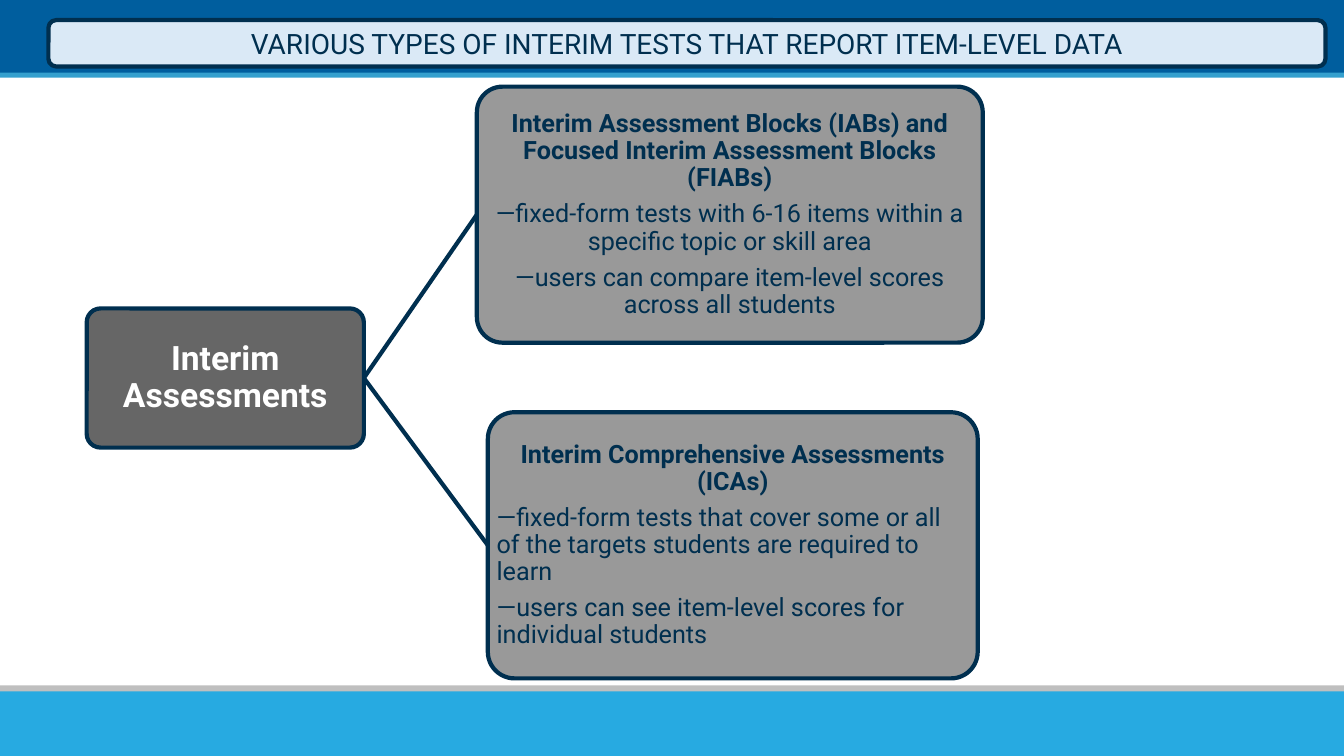
"""Build the slide on interim tests that report item-level data."""
from lxml import etree
from pptx import Presentation
from pptx.dml.color import RGBColor
from pptx.enum.shapes import MSO_CONNECTOR, MSO_SHAPE
from pptx.enum.text import MSO_ANCHOR, PP_ALIGN
from pptx.oxml.ns import qn
from pptx.util import Pt

RECT, ROUNDED = MSO_SHAPE.RECTANGLE, MSO_SHAPE.ROUNDED_RECTANGLE
STRAIGHT = MSO_CONNECTOR.STRAIGHT
MIDDLE = MSO_ANCHOR.MIDDLE
LEFT, CENTER = PP_ALIGN.LEFT, PP_ALIGN.CENTER
LEFT_SIDE, RIGHT_SIDE = 1, 3
FONT = "Roboto"
SLIDE_WIDTH, SLIDE_HEIGHT = 960, 540
COLORS = {
    "header": "005E9E", "header_edge": "35A0CE",
    "footer_edge": "BFBFBF", "footer": "27AAE1",
    "navy": "002F4F", "white": "FFFFFF", "title": "DAE9F6",
    "root": "666666", "branch": "999999",
}
BANDS = [
    ("header", -0.7, 54), ("header_edge", 51.8, 3.6),
    ("footer_edge", 489.6, 10), ("footer", 493.9, 46.1),
]
TITLE = "VARIOUS TYPES OF INTERIM TESTS THAT REPORT ITEM-LEVEL DATA"
TITLE_BOX = (34.6, 14.4, 912.2, 33.1)
ROOT_BOX = (61.9, 220.3, 198, 99.4)
BRANCHES = [
    ((340.6, 61.9, 361.4, 182.9), CENTER,
     "Interim Assessment Blocks (IABs) and Focused Interim Assessment Blocks (FIABs)",
     ["—fixed-form tests with 6-16 items within a specific topic or skill area",
      "—users can compare item-level scores across all students"]),
    ((348.5, 294.5, 349.9, 190.1), LEFT,
     "Interim Comprehensive Assessments (ICAs)",
     ["—fixed-form tests that cover some or all of the targets students are required to learn",
      "—users can see item-level scores for individual students"]),
]


def rgb(name):
    """Return the named palette colour."""
    return RGBColor.from_string(COLORS[name])


def apply(target, values):
    """Set each attribute given in a dict of format values."""
    for key, value in values.items():
        setattr(target, key, value)


def add_outline(line):
    """Give a line the navy three-point stroke."""
    line.color.rgb = rgb("navy")
    line.width = Pt(3)


def add_panel(slide, kind, box, fill):
    """Add a flat filled shape without an outline."""
    panel = slide.shapes.add_shape(kind, *map(Pt, box))
    panel.shadow.inherit = False
    panel.fill.solid()
    panel.fill.fore_color.rgb = rgb(fill)
    panel.line.fill.background()
    return panel


def set_frame(frame, inset_x, inset_y):
    """Set wrapping, middle anchoring and margins of a text frame."""
    apply(frame, {
        "word_wrap": True, "vertical_anchor": MIDDLE,
        "margin_left": Pt(inset_x), "margin_right": Pt(inset_x),
        "margin_top": Pt(inset_y), "margin_bottom": Pt(inset_y),
    })


def write(paragraph, text, size, color, bold=False, align=CENTER):
    """Fill a paragraph and format it."""
    paragraph.text = text
    paragraph.alignment = align
    apply(paragraph.font, {"name": FONT, "size": Pt(size), "bold": bold})
    paragraph.font.color.rgb = rgb(color)


def add_node(slide, box, fill, inset, lines):
    """Add an outlined tree node holding (text, size, colour, bold, align) lines."""
    node = add_panel(slide, ROUNDED, box, fill)
    node.adjustments[0] = 0.1
    add_outline(node.line)
    frame = node.text_frame
    set_frame(frame, inset, inset)
    for index, line in enumerate(lines):
        paragraph = frame.add_paragraph() if index else frame.paragraphs[0]
        write(paragraph, *line)
        size = line[1]
        apply(paragraph, {"line_spacing": 0.9, "space_after": Pt(0.35 * size)})
    return node


def add_link(slide, root, branch):
    """Join the root's right side to a branch's left side."""
    link = slide.shapes.add_connector(STRAIGHT, 0, 0, 0, 0)
    link.begin_connect(root, RIGHT_SIDE)
    link.end_connect(branch, LEFT_SIDE)
    add_outline(link.line)
    etree.SubElement(link._element.spPr, qn("a:effectLst"))


def add_title(slide):
    """Place the title over its rounded bar."""
    bar = add_panel(slide, ROUNDED, TITLE_BOX, "title")
    add_outline(bar.line)
    title = slide.shapes.title
    apply(title, dict(zip(("left", "top", "width", "height"), map(Pt, TITLE_BOX))))
    set_frame(title.text_frame, 7.2, 3.6)
    write(title.text_frame.paragraphs[0], TITLE, 20, "navy")
    bar._element.addnext(title._element)


def main():
    """Assemble and save the slide."""
    deck = Presentation()
    deck.slide_width, deck.slide_height = Pt(SLIDE_WIDTH), Pt(SLIDE_HEIGHT)
    slide = deck.slides.add_slide(deck.slide_layouts.get_by_name("Title Only"))
    for color, top, height in BANDS:
        add_panel(slide, RECT, (0, top, SLIDE_WIDTH, height), color)
    root = add_node(slide, ROOT_BOX, "root", 1.4,
                    [("Interim Assessments", 24, "white", True, CENTER)])
    for box, align, heading, details in BRANCHES:
        lines = [(heading, 18, "navy", True, CENTER)]
        lines += [(detail, 18, "navy", False, align) for detail in details]
        branch = add_node(slide, box, "branch", 0.7, lines)
        add_link(slide, root, branch)
    add_title(slide)
    deck.save("out.pptx")


if __name__ == "__main__":
    main()
